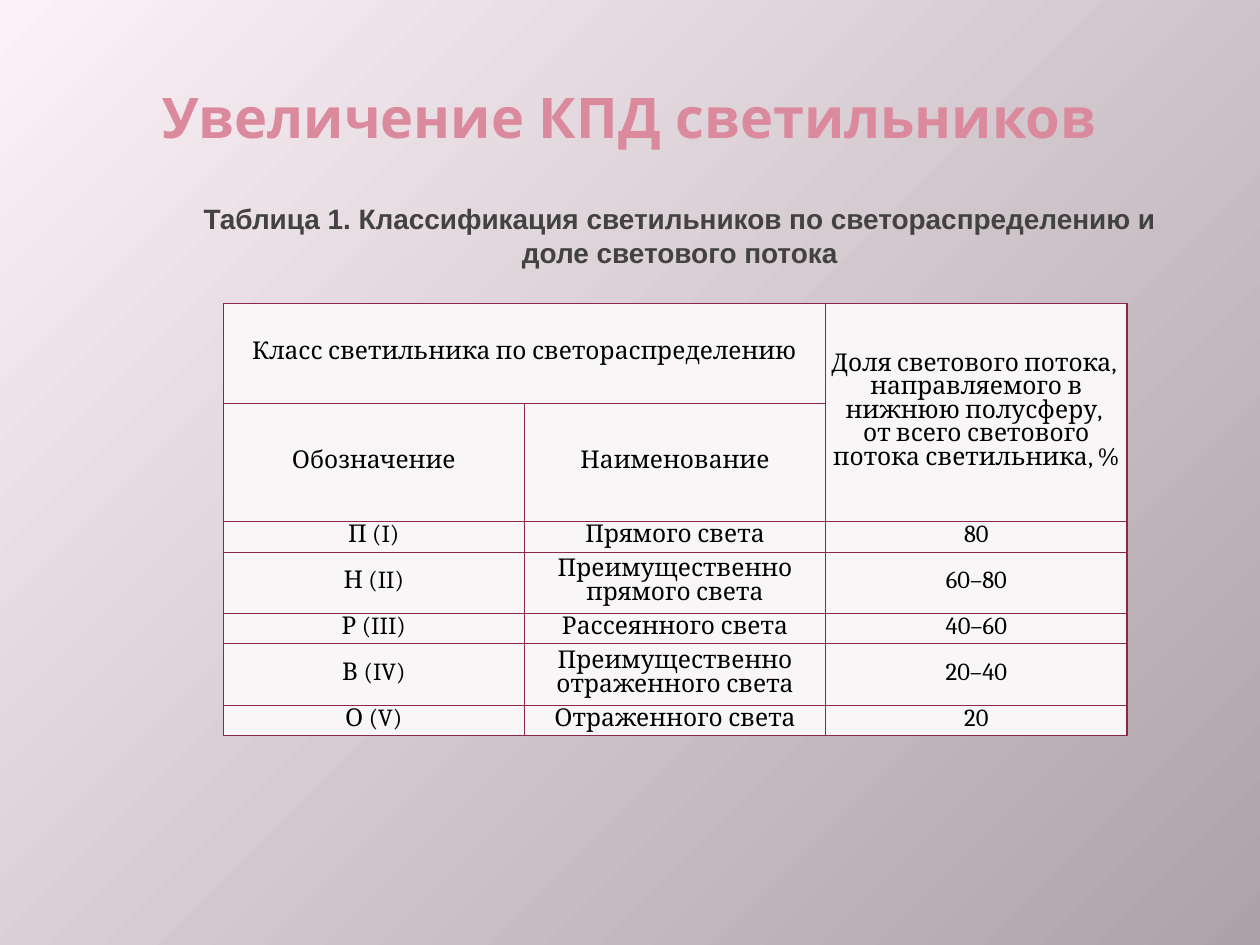
from dataclasses import dataclass

from lxml.etree import SubElement
from pptx import Presentation
from pptx.dml.color import RGBColor as RGB
from pptx.enum.text import MSO_ANCHOR as ANCHOR, PP_ALIGN as ALIGN
from pptx.oxml.ns import qn
from pptx.util import Pt


@dataclass(frozen=True)
class Theme:
    # colours
    bg_stops: tuple = ((0, "FCF1F6"), (100, "ADA2A7"))
    title_stops: tuple = ((0, "DB8A9E"), (73, "DB8A9E"), (100, "D6708A"))
    caption: str = "424242"
    body: str = "000000"
    cell: str = "F9F6F7"
    border: str = "8A284A"
    # fonts and sizes
    title_font: str = "Open Sans"
    caption_font: str = "Arial"
    table_font: str = "Cambria"
    title_size: float = 32
    caption_size: float = 16
    table_size: float = 14
    table_leading: float = 13.5
    border_width: float = 0.75


def add_color(parent, color):
    SubElement(parent, qn("a:srgbClr"), val=color)


def set_gradient(fill, owner, stops, angle=None):
    """Linear gradient at an angle, or radial from the top left corner."""
    fill.gradient()
    grad = next(owner.iter(qn("a:gradFill")))
    for child in list(grad):
        grad.remove(child)
    gs_list = SubElement(grad, qn("a:gsLst"))
    for pos, color in stops:
        add_color(SubElement(gs_list, qn("a:gs"), pos=str(pos * 1000)), color)
    if angle is None:
        way = SubElement(grad, qn("a:path"), {"path": "circle"})
        SubElement(way, qn("a:fillToRect"), r="100000", b="100000")
    else:
        SubElement(grad, qn("a:lin"), ang=str(angle * 60000), scaled="0")


def write(tf, text, font, size, color=None, bold=False, leading=None):
    """Fill a text frame with one centred paragraph; return its runs."""
    p = tf.paragraphs[0]
    p.alignment = ALIGN.CENTER
    if leading:
        p.line_spacing = Pt(leading)
    runs = []
    for i, line in enumerate(text.split("\n")):
        if i:
            p.add_line_break()
        r = p.add_run()
        r.text = line
        r.font.name, r.font.size, r.font.bold = font, Pt(size), bold
        if color:
            r.font.color.rgb = RGB.from_string(color)
        runs.append(r)
    return runs


class SlideBuilder:
    def __init__(self, prs, theme):
        self.theme = theme
        self.slide = prs.slides.add_slide(prs.slide_layouts[5])

    def background(self):
        set_gradient(self.slide.background.fill, self.slide.element,
                     self.theme.bg_stops)

    def title(self, text, x, y, w, h):
        t, sp = self.theme, self.slide.shapes.title
        sp.left, sp.top, sp.width, sp.height = map(Pt, (x, y, w, h))
        sp.text_frame.vertical_anchor = ANCHOR.MIDDLE
        for r in write(sp.text_frame, text, t.title_font, t.title_size, bold=True):
            set_gradient(r.font.fill, sp.element, t.title_stops, angle=80)

    def caption(self, text, x, y, w, h):
        t = self.theme
        tf = self.slide.shapes.add_textbox(*map(Pt, (x, y, w, h))).text_frame
        tf.word_wrap = True
        tf.vertical_anchor = ANCHOR.TOP
        write(tf, text, t.caption_font, t.caption_size, t.caption, bold=True)

    def table(self, rows, x, y, col_width, heights, merges):
        n = len(rows[0])
        frame = self.slide.shapes.add_table(
            len(rows), n, Pt(x), Pt(y), Pt(col_width * n), Pt(sum(heights)))
        table = frame.table
        table.first_row = table.horz_banding = False
        for col in table.columns:
            col.width = Pt(col_width)
        for row, height in zip(table.rows, heights):
            row.height = Pt(height)
        for start, end in merges:
            table.cell(*start).merge(table.cell(*end))
        for i, row in enumerate(rows):
            for j, text in enumerate(row):
                self.cell(table.cell(i, j), text)

    def cell(self, cell, text):
        t = self.theme
        cell.vertical_anchor = ANCHOR.MIDDLE
        cell.margin_left = cell.margin_right = 0
        cell.margin_top = cell.margin_bottom = 0
        if text:
            write(cell.text_frame, text, t.table_font, t.table_size, t.body,
                  leading=t.table_leading)
        # borders come before the fill in the cell properties
        tc_pr = cell._tc.get_or_add_tcPr()
        for side in ("lnL", "lnR", "lnT", "lnB"):
            ln = SubElement(tc_pr, qn("a:" + side), w=str(Pt(t.border_width)))
            add_color(SubElement(ln, qn("a:solidFill")), t.border)
        cell.fill.solid()
        cell.fill.fore_color.rgb = RGB.from_string(t.cell)


ROWS = [
    ("Класс светильника по светораспределению", None,
     "Доля светового потока, \nнаправляемого в нижнюю полусферу, \n"
     "от всего светового потока светильника, %"),
    ("Обозначение", "Наименование", None),
    ("П (I)", "Прямого света", "80"),
    ("Н (II)", "Преимущественно прямого света", "60–80"),
    ("Р (III)", "Рассеянного света", "40–60"),
    ("В (IV)", "Преимущественно отраженного света", "20–40"),
    ("О (V)", "Отраженного света", "20"),
]
SINGLE, DOUBLE = 17.5, 35


def main():
    prs = Presentation()
    prs.slide_width, prs.slide_height = Pt(720), Pt(540)
    s = SlideBuilder(prs, Theme())
    s.background()
    s.title("Увеличение КПД светильников", 36, 21.6, 648, 90)
    # table with a two-level header
    s.table(ROWS, 127.5, 173.5, 172.2,
            [57, 34, SINGLE, DOUBLE, SINGLE, DOUBLE, SINGLE],
            merges=[((0, 0), (0, 1)), ((0, 2), (1, 2))])
    s.caption("Таблица 1. Классификация светильников по светораспределению "
              "и доле светового потока", 93.6, 111.6, 589.7, 58.3)
    prs.save("out.pptx")


if __name__ == "__main__":
    main()
